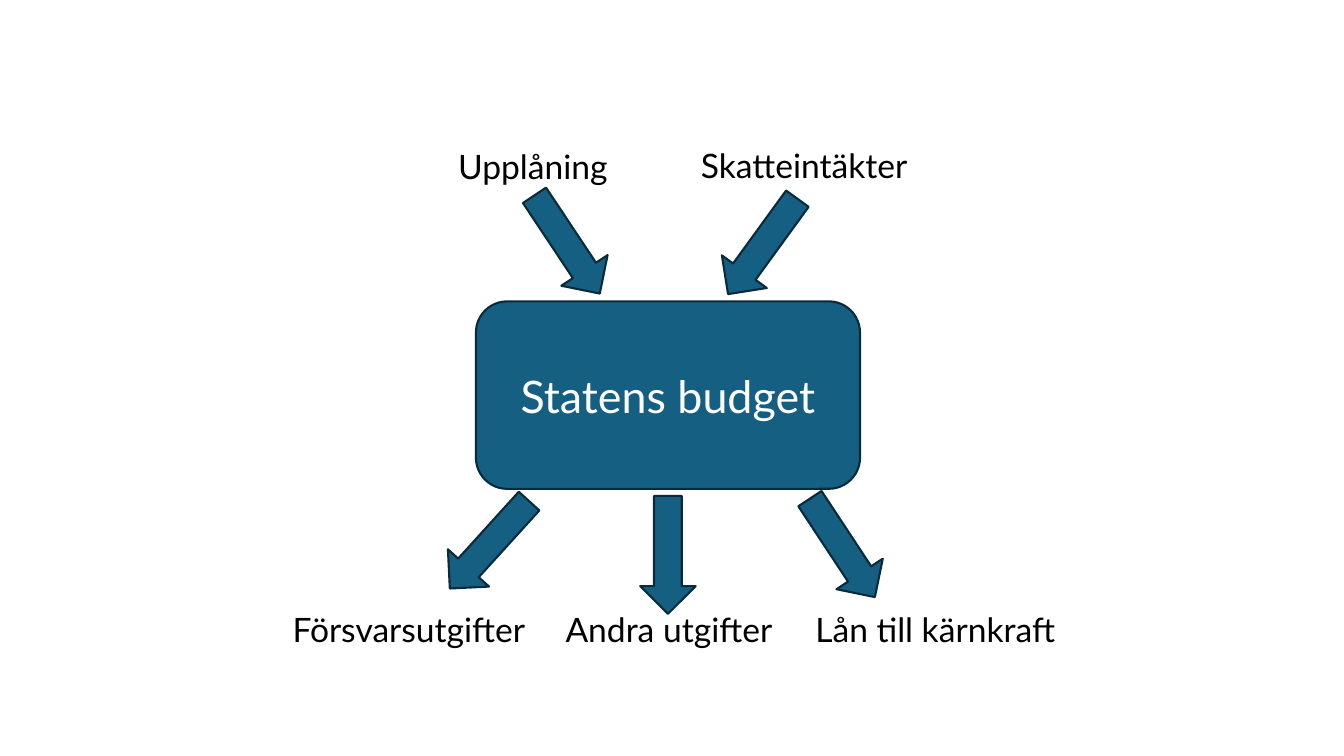
from pptx import Presentation
from pptx.dml.color import RGBColor
from pptx.enum.shapes import MSO_SHAPE as Shape
from pptx.enum.text import MSO_ANCHOR as Anchor, PP_ALIGN as Align
from pptx.util import Inches, Pt

SLIDE_WIDTH, SLIDE_HEIGHT = Inches(13.33), Inches(7.5)
FONT = "Lato"
BLUE, DARK, WHITE, BLACK = "156082", "092A39", "FFFFFF", "000000"

# Sizes as percent of slide width and height
BUDGET_SIZE = (28.58, 24.8)
ARROW_SIZE = (4.13, 15.6)
LABEL_SIZE = (19.58, 9.07)

# Text, label centre, arrow centre (percent) and arrow rotation (degrees)
FLOWS = [
    ("Upplåning", (39.65, 22), (42.2, 32.33), 326.4),
    ("Skatteintäkter", (59.83, 21.87), (56.75, 32.6), 36),
    ("Försvarsutgifter", (30.42, 83.2), (36.42, 72.07), 42.2),
    ("Andra utgifter", (49.77, 83.2), (49.7, 73.4), 0),
    ("Lån till kärnkraft", (69.58, 83.2), (62.68, 72.47), 326.6),
]


def color(value):
    return RGBColor.from_string(value)


def frame(center, size):
    """Turn a centre and size in percent into left, top, width, height."""
    (x, y), (width, height) = center, size
    return (
        int(SLIDE_WIDTH * (x - width / 2) / 100),
        int(SLIDE_HEIGHT * (y - height / 2) / 100),
        int(SLIDE_WIDTH * width / 100),
        int(SLIDE_HEIGHT * height / 100),
    )


def write(box, text, size=24, fill=BLACK):
    box.text_frame.word_wrap = True
    box.text_frame.vertical_anchor = Anchor.MIDDLE
    para = box.text_frame.paragraphs[0]
    para.alignment = Align.CENTER
    span = para.add_run()
    span.text = text
    span.font.name = FONT
    span.font.size = Pt(size)
    span.font.color.rgb = color(fill)


def add_block(page, kind, center, size, rotation=0):
    block = page.shapes.add_shape(kind, *frame(center, size))
    block.rotation = rotation
    block.shadow.inherit = False
    block.fill.solid()
    block.fill.fore_color.rgb = color(BLUE)
    block.line.color.rgb = color(DARK)
    block.line.width = Pt(1.5)
    return block


def add_label(page, text, center):
    box = page.shapes.add_textbox(*frame(center, LABEL_SIZE))
    write(box, text)


def main():
    deck = Presentation()
    deck.slide_width, deck.slide_height = SLIDE_WIDTH, SLIDE_HEIGHT
    page = deck.slides.add_slide(deck.slide_layouts[6])

    # Central budget box
    budget = add_block(page, Shape.ROUNDED_RECTANGLE, (49.7, 52.27), BUDGET_SIZE)
    write(budget, "Statens budget", size=32, fill=WHITE)

    # Income above and spending below
    for text, label_center, arrow_center, rotation in FLOWS:
        add_block(page, Shape.DOWN_ARROW, arrow_center, ARROW_SIZE, rotation)
        add_label(page, text, label_center)

    deck.save("out.pptx")


if __name__ == "__main__":
    main()
